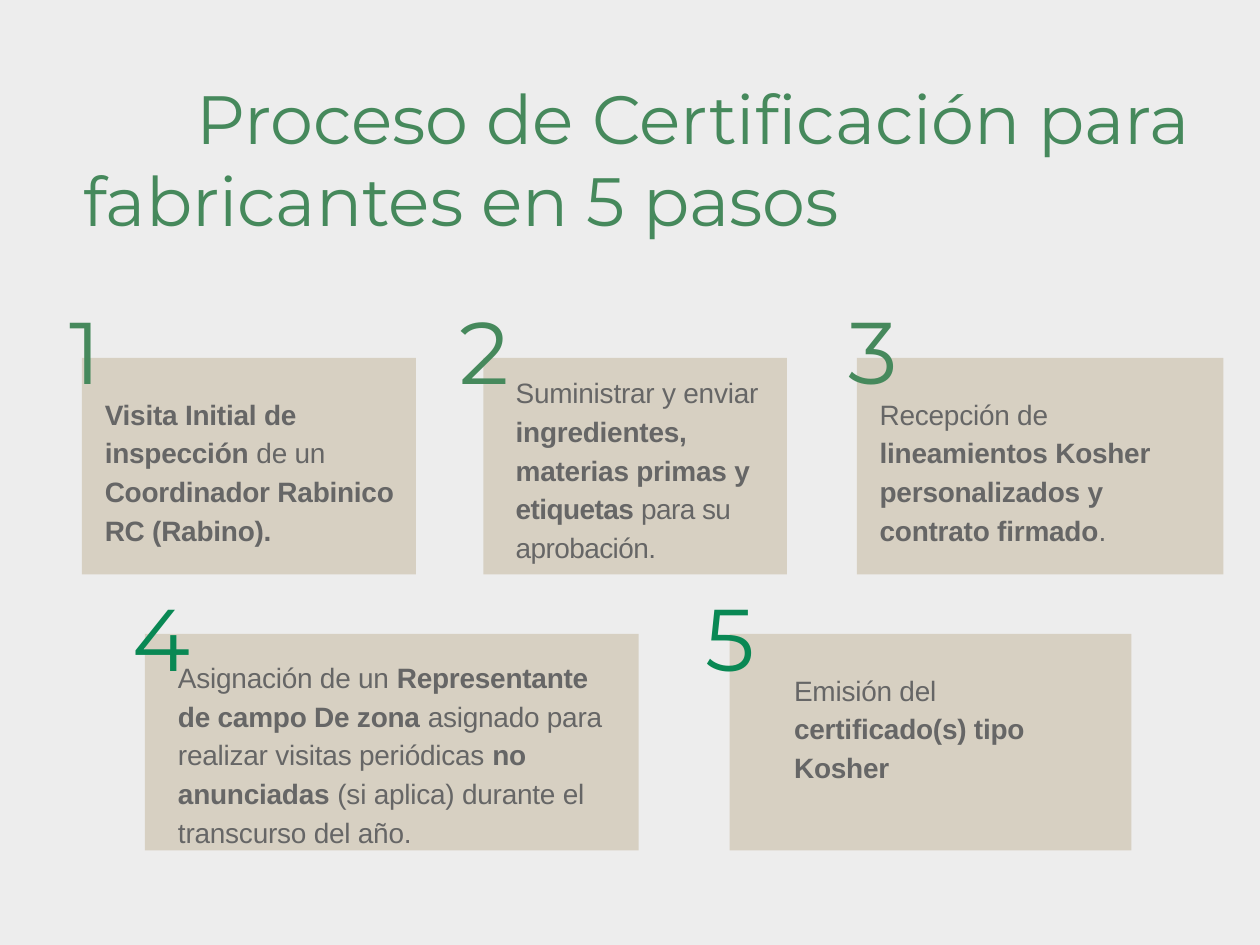
import pptx
import pptx.dml.color
import pptx.enum.shapes
import pptx.enum.text
import pptx.util

Pt = pptx.util.Pt
RGBColor = pptx.dml.color.RGBColor

BACKGROUND = RGBColor(0xED, 0xED, 0xED)
CARD = RGBColor(0xD7, 0xD0, 0xC2)
GREY = RGBColor(0x66, 0x66, 0x66)
GREEN = RGBColor(0x46, 0x89, 0x5C)
DEEP_GREEN = RGBColor(0x09, 0x88, 0x54)

HEADING_FONT = "Montserrat"
BODY_FONT = "Arial"
CARD_HEIGHT = 123.8


class ProcessSlide:
    """Holds the style and the slide being built."""

    def __init__(self, presentation):
        self.slide = presentation.slides.add_slide(presentation.slide_layouts[6])
        fill = self.slide.background.fill
        fill.solid()
        fill.fore_color.rgb = BACKGROUND

    def text_box(self, left, top, width, height, size, font, color):
        """Add an empty text box and return its styled paragraph."""
        box = self.slide.shapes.add_textbox(Pt(left), Pt(top), Pt(width), Pt(height))
        frame = box.text_frame
        frame.word_wrap = True
        frame.auto_size = pptx.enum.text.MSO_AUTO_SIZE.NONE
        frame.margin_left = frame.margin_right = frame.margin_bottom = 0
        frame.margin_top = Pt(1)
        paragraph = frame.paragraphs[0]
        paragraph._p.get_or_add_pPr().set("marL", str(Pt(0.9)))
        paragraph.font.size = Pt(size)
        paragraph.font.name = font
        paragraph.font.color.rgb = color
        return paragraph

    def title(self, text):
        paragraph = self.text_box(46.8, 42.5, 643, 95.8, 39, HEADING_FONT, GREEN)
        paragraph._p.get_or_add_pPr().set("indent", str(Pt(64.8)))
        paragraph.add_run().text = text

    def card(self, left, top, width):
        shape = self.slide.shapes.add_shape(
            pptx.enum.shapes.MSO_SHAPE.RECTANGLE,
            Pt(left), Pt(top), Pt(width), Pt(CARD_HEIGHT))
        shape.shadow.inherit = False
        shape.fill.solid()
        shape.fill.fore_color.rgb = CARD
        shape.line.fill.background()

    def number(self, text, left, top, color):
        paragraph = self.text_box(left, top, 35.3, 61.9, 50, HEADING_FONT, color)
        paragraph.add_run().text = text

    def body(self, left, top, width, height, parts):
        """Each part is (text, bold) or (text, bold, letter spacing in points)."""
        paragraph = self.text_box(left, top, width, height, 16, BODY_FONT, GREY)
        paragraph.line_spacing = 1.15
        for text, bold, *spacing in parts:
            run = paragraph.add_run()
            run.text = text
            run.font.bold = bold
            points = spacing[0] if spacing else -0.1
            run._r.get_or_add_rPr().set("spc", str(round(points * 100)))


# Rows: card top, number top, number colour
UPPER = (204.5, 168.5, GREEN)
LOWER = (362.2, 332.6, DEEP_GREEN)

# Steps: row, card left and width, number left, body box, body parts
STEPS = [
    (UPPER, 46.8, 190.8, 38.9, (59, 223.2, 170.6, 88.6),
     [("Visita Initial de inspección ", True), ("de un ", False),
      ("Coordinador Rabinico RC (Rabino).", True)]),
    (UPPER, 276.2, 173.5, 261.4, (293.8, 211, 148.3, 110.9),
     [("Suministrar y enviar ", False),
      ("ingredientes, materias primas y ", True),
      ("etiquetas ", True, -0.3), ("para su aprobación.", False, -0.3)]),
    (UPPER, 489.6, 209.5, 483.8, (501.8, 223.2, 187.2, 88.6),
     [("Recepción de ", False),
      ("lineamientos Kosher personalizados y contrato firmado", True),
      (".", False)]),
    (LOWER, 82.8, 282.2, 74.9, (100.8, 373.7, 250.6, 110.9),
     [("Asignación de un ", False), ("Representante de campo De zona ", True),
      ("asignado para realizar visitas periódicas ", False),
      ("no anunciadas ", True),
      ("(si aplica) durante el transcurso del año.", False)]),
    (LOWER, 416.9, 229.7, 402.5, (452.9, 380.9, 141.1, 66.2),
     [("Emisión del ", False), ("certificado(s) tipo Kosher", True)]),
]


def main():
    presentation = pptx.Presentation()
    presentation.slide_width = Pt(720)
    presentation.slide_height = Pt(540)
    process = ProcessSlide(presentation)

    # Title
    process.title("Proceso de Certificación para fabricantes en 5 pasos")

    # Numbered steps
    for index, step in enumerate(STEPS, start=1):
        (card_top, number_top, color), left, width, number_left, box, parts = step
        process.card(left, card_top, width)
        process.body(*box, parts)
        process.number(str(index), number_left, number_top, color)

    presentation.save("out.pptx")


if __name__ == "__main__":
    main()
